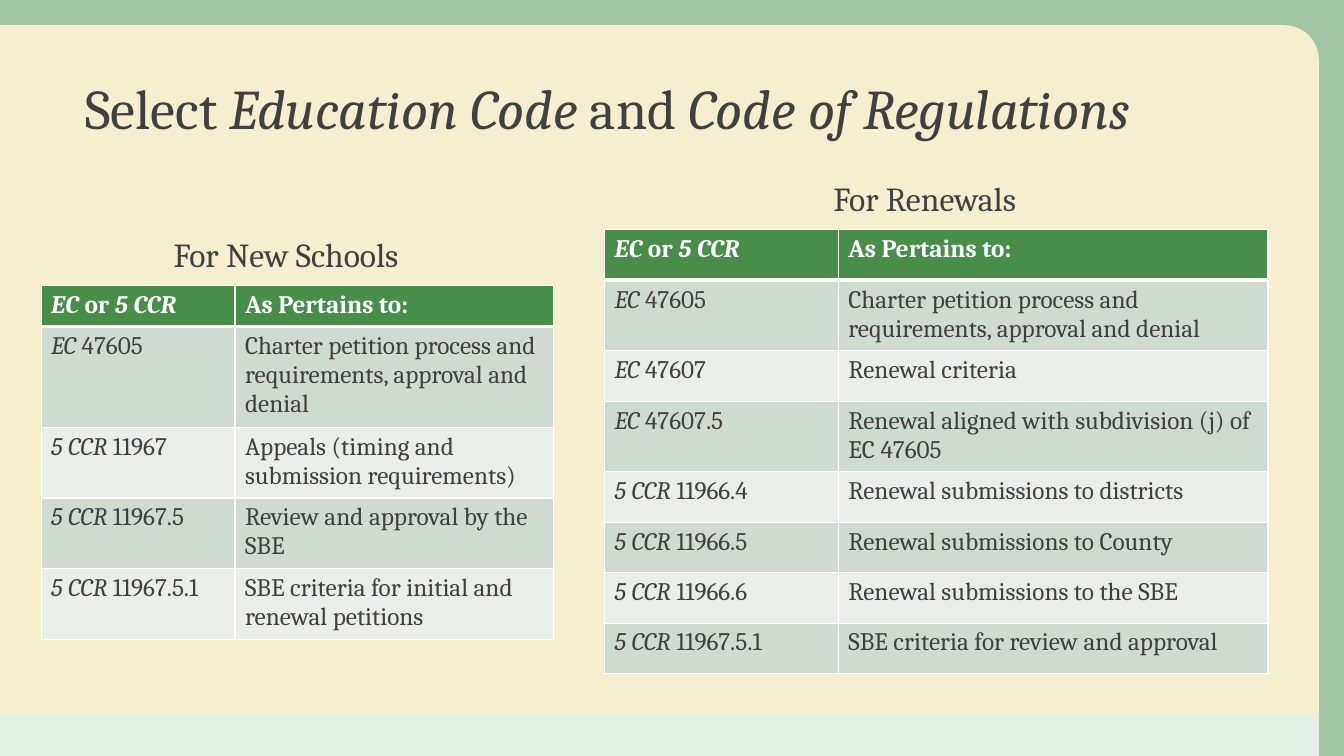
import pptx
import pptx.dml.color
import pptx.enum.shapes
import pptx.enum.text
import pptx.util
from lxml import etree
from pptx.oxml.ns import qn

Pt = pptx.util.Pt
RGB = pptx.dml.color.RGBColor.from_string
SHAPE = pptx.enum.shapes.MSO_SHAPE
ANCHOR = pptx.enum.text.MSO_ANCHOR

THEME = {
    "font": "Cambria", "title": 40, "caption": 24, "cell": 18,
    "ink": "404040", "white": "FFFFFF", "green": "488E4A",
    "mint": "D8EBD8", "cream": "F5EECF", "bands": ("E9EEE9", "CFDBD0"),
}


def write(frame, text, size, color, bold=False):
    """Fill the first paragraph; parts between asterisks are italic."""
    paragraph = frame.paragraphs[0]
    for index, part in enumerate(text.split("*")):
        if not part:
            continue
        run = paragraph.add_run()
        run.text = part
        look = {"name": THEME["font"], "size": Pt(size), "bold": bold, "italic": index % 2 == 1}
        for key, value in look.items():
            setattr(run.font, key, value)
        run.font.color.rgb = RGB(color)
    return paragraph


def add_border(cell, side, width):
    line = etree.SubElement(cell._tc.get_or_add_tcPr(), qn(f"a:ln{side}"), w=str(Pt(width)))
    solid = etree.SubElement(line, qn("a:solidFill"))
    etree.SubElement(solid, qn("a:srgbClr"), val=THEME["white"])


deck = pptx.Presentation()
deck.slide_width, deck.slide_height = Pt(960), Pt(540)
slide = deck.slides.add_slide(deck.slide_layouts[5])

# Backdrop: form, place, colour, opacity in percent
backdrop = [
    (SHAPE.RECTANGLE, (0, 510, 942, 30), "mint", 70),
    (SHAPE.RECTANGLE, (942, 510, 18, 30), "green", 50),
    (SHAPE.RECTANGLE, (0, 0, 960, 510), "green", 50),
    (SHAPE.ROUND_1_RECTANGLE, (0, 18, 942, 492), "cream", 100),
]
for form, place, color, opacity in backdrop:
    panel = slide.shapes.add_shape(form, *map(Pt, place))
    panel.shadow.inherit = False
    panel.line.fill.background()
    panel.fill.solid()
    panel.fill.fore_color.rgb = RGB(THEME[color])
    if opacity < 100:
        tint = panel._element.spPr.find(".//" + qn("a:srgbClr"))
        etree.SubElement(tint, qn("a:alpha"), val=str(opacity * 1000))
    if form == SHAPE.ROUND_1_RECTANGLE:
        panel.adjustments[0] = 0.05

# The title goes in front of the backdrop
title = slide.shapes.title
slide.shapes._spTree.append(title._element)
title.left, title.top, title.width, title.height = map(Pt, (54, 42, 840, 63))
title_format = {"vertical_anchor": ANCHOR.BOTTOM, "word_wrap": True,
                "auto_size": pptx.enum.text.MSO_AUTO_SIZE.NONE}
for key, value in title_format.items():
    setattr(title.text_frame, key, value)
heading = write(title.text_frame, "Select *Education Code *and *Code of Regulations*",
                THEME["title"], THEME["ink"])
heading.alignment = pptx.enum.text.PP_ALIGN.LEFT
heading.line_spacing = 0.9

header = ("*EC *or *5 CCR*", "As Pertains to:")
petition = ("*EC* 47605", "Charter petition process and requirements, approval and denial")
sections = [
    {
        "caption": "For New Schools", "caption_at": (116.9, 162, 192, 42),
        "table_at": (29.4, 204), "columns": (138.5, 227.5), "row_height": 29.2,
        "rows": [
            header,
            petition,
            ("*5 CCR* 11967", "Appeals (timing and submission requirements)"),
            ("*5 CCR* 11967.5", "Review and approval by the SBE"),
            ("*5 CCR* 11967.5.1", "SBE criteria for initial and renewal petitions"),
        ],
    },
    {
        "caption": "For Renewals", "caption_at": (588.2, 122.2, 162, 42),
        "table_at": (431.8, 164.2), "columns": (167, 307), "row_height": 36,
        "rows": [
            header,
            petition,
            ("*EC *47607", "Renewal criteria"),
            ("*EC *47607.5", "Renewal aligned with subdivision (j) of EC 47605"),
            ("*5 CCR* 11966.4", "Renewal submissions to districts"),
            ("*5 CCR* 11966.5", "Renewal submissions to County"),
            ("*5 CCR* 11966.6", "Renewal submissions to the SBE"),
            ("*5 CCR* 11967.5.1", "SBE criteria for review and approval"),
        ],
    },
]

for section in sections:
    caption = slide.shapes.add_textbox(*map(Pt, section["caption_at"])).text_frame
    caption.word_wrap = True
    caption.vertical_anchor = ANCHOR.MIDDLE
    write(caption, section["caption"], THEME["caption"], THEME["ink"]).line_spacing = 0.9

    rows, columns = section["rows"], section["columns"]
    size = (sum(columns), section["row_height"] * len(rows))
    codes = slide.shapes.add_table(len(rows), len(columns),
                                   *map(Pt, section["table_at"] + size)).table
    for column, width in zip(codes.columns, columns):
        column.width = Pt(width)
    for r, texts in enumerate(rows):
        codes.rows[r].height = Pt(section["row_height"])
        is_header = r == 0
        for c, text in enumerate(texts):
            cell = codes.cell(r, c)
            # A heavier rule parts the header from the rows below it
            for side in "LRTB":
                add_border(cell, side, 3 if (r, side) in ((0, "B"), (1, "T")) else 1)
            cell.fill.solid()
            cell.fill.fore_color.rgb = RGB(THEME["green"] if is_header else THEME["bands"][r % 2])
            write(cell.text_frame, text, THEME["cell"],
                  THEME["white"] if is_header else THEME["ink"], is_header)

deck.save("out.pptx")
